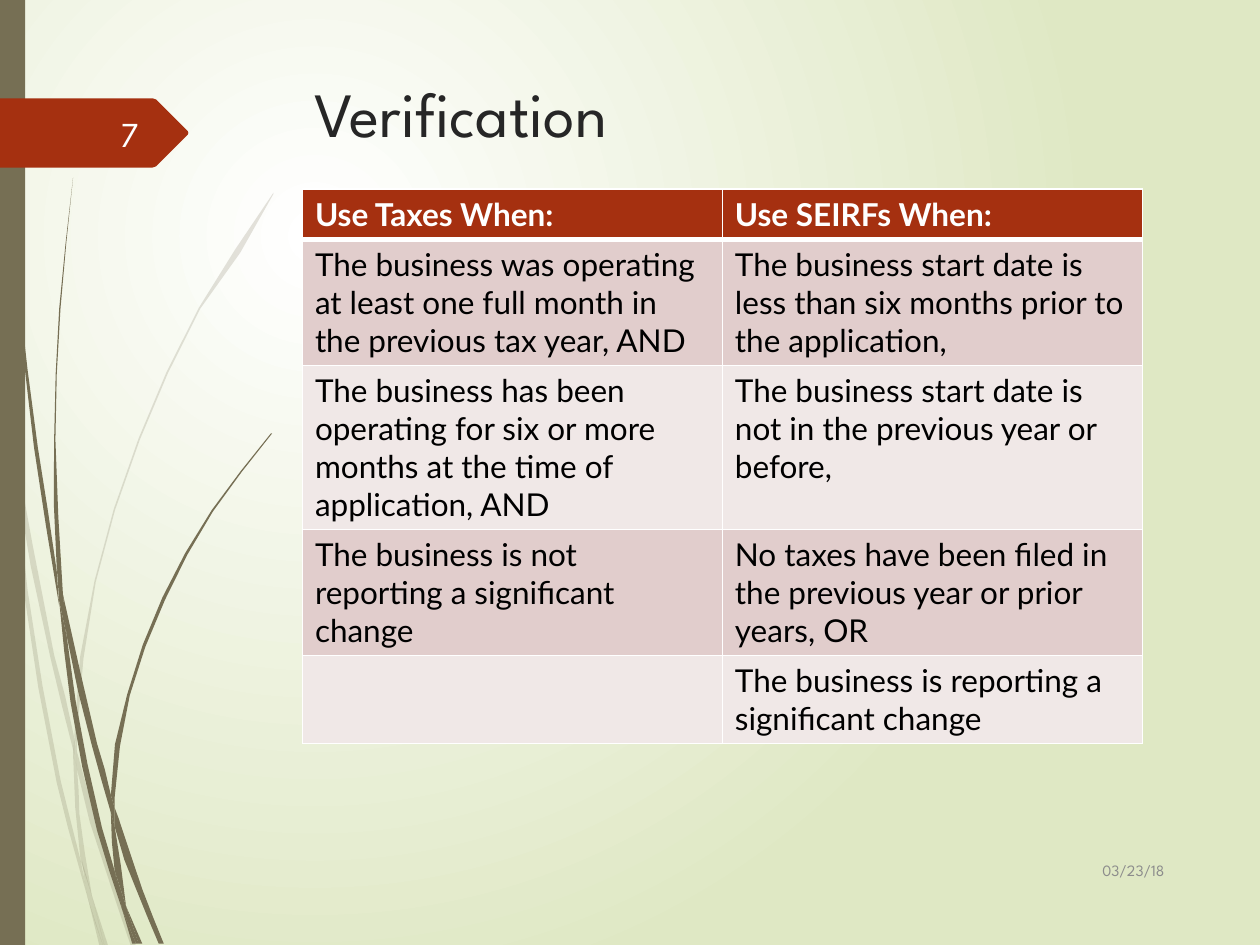
from math import hypot

from pptx import Presentation
from pptx.dml.color import RGBColor
from pptx.enum.shapes import MSO_SHAPE
from pptx.enum.text import MSO_ANCHOR, PP_ALIGN
from pptx.oxml import parse_xml
from pptx.oxml.ns import nsdecls, qn
from pptx.util import Pt

RECTANGLE = MSO_SHAPE.RECTANGLE
TOP, MIDDLE = MSO_ANCHOR.TOP, MSO_ANCHOR.MIDDLE
LEFT, RIGHT = PP_ALIGN.LEFT, PP_ALIGN.RIGHT

WHITE = RGBColor(0xFF, 0xFF, 0xFF)
BLACK = RGBColor(0, 0, 0)
PALE_GREEN = RGBColor(0xDF, 0xE8, 0xC4)
OLIVE = RGBColor(0x76, 0x6F, 0x54)
RUST = RGBColor(0xA5, 0x30, 0x10)
DARK_BAND = RGBColor(0xE1, 0xCD, 0xCC)
LIGHT_BAND = RGBColor(0xF0, 0xE8, 0xE7)
TITLE_INK = RGBColor(0x26, 0x26, 0x26)
DATE_INK = RGBColor(0x8C, 0x8C, 0x8C)
NUMBER_INK = RGBColor(0xFE, 0xFF, 0xFF)

HEADING_FONT, BODY_FONT = "League Spartan", "Lato"
GRID = 0.72  # points per step of the outline coordinates
LONG_SPAN = 30  # a span of this length gets one extra point in its middle
CORNER_COSINE = 0.8

PALE_BLADES = [
    [(8, 350), (0, 282), (0, 299)],
    [(40, 522), (59, 599), (59, 586), (43, 520), (10, 345), (12, 376)],
    [(64, 607), (61, 596), (61, 610), (85, 694), (104, 751), (108, 751), (88, 692)],
    [(83, 751), (86, 751), (73, 711)],
    [(64, 683), (48, 619), (22, 469), (12, 376), (8, 350), (19, 470), (45, 621),
     (64, 693), (70, 714)],
    [(58, 599), (64, 683), (73, 711), (63, 646), (61, 608)],
    [(61, 584), (76, 462), (111, 349), (159, 245), (217, 154),
     (217, 153), (158, 244), (110, 348), (75, 461), (59, 584), (61, 596)],
    [(70, 714), (79, 751), (82, 751)],
    [(61, 608), (61, 596), (59, 586), (58, 599)],
    [(65, 683), (70, 714), (82, 751), (83, 751), (73, 711)],
]
DARK_BLADES = [
    [(5, 110), (14, 233), (27, 355), (47, 481), (45, 453),
     (30, 355), (15, 232), (6, 109), (3, 0), (2, 0)],
    [(73, 592), (88, 645), (88, 631), (77, 590), (50, 472), (53, 505)],
    [(94, 649), (91, 641), (91, 656), (109, 708), (126, 749), (130, 749), (113, 706)],
    [(91, 691), (81, 657), (60, 556), (53, 505), (47, 477), (56, 557), (77, 659),
     (97, 722)],
    [(50, 472), (44, 349), (48, 245), (58, 141), (47, 245), (43, 349), (45, 449),
     (49, 472)],
    [(110, 749), (113, 749), (100, 719)],
    [(47, 477), (53, 505), (50, 472), (45, 449)],
    [(91, 633), (103, 552), (131, 476), (169, 406), (216, 344),
     (215, 344), (168, 405), (129, 474), (101, 551), (88, 631), (91, 641)],
    [(97, 722), (105, 749), (108, 749)],
    [(88, 645), (91, 691), (100, 719), (91, 656)],
    [(88, 645), (91, 656), (91, 641), (88, 631)],
    [(91, 691), (97, 722), (108, 749), (110, 749), (100, 719)],
]
NUMBER_TAG = [(149, 107), (124, 132), (121, 133), (0, 133), (0, 78),
              (121, 78), (124, 79), (149, 104), (149.5, 105.5)]

TABLE_ROWS = [
    ("Use Taxes When:", "Use SEIRFs When:"),
    ("The business was operating at least one full month in the previous tax year, AND",
     "The business start date is less than six months prior to the application,"),
    ("The business has been operating for six or more months at the time of "
     "application, AND",
     "The business start date is not in the previous year or before,"),
    ("The business is not reporting a significant change",
     "No taxes have been filed in the previous year or prior years, OR"),
    ("", "The business is reporting a significant change"),
]
ROW_HEIGHTS = [28.8, 72, 93.6, 72, 50.4]


def unit(start, end):
    """Direction from start to end, with length one."""
    dx, dy = end[0] - start[0], end[1] - start[1]
    length = hypot(dx, dy)
    return dx / length, dy / length


def smooth(anchors):
    """Bend the long spans of a closed outline, but keep its sharp tips."""
    ends = anchors[1:] + anchors[:1]
    headings = [unit(start, end) for start, end in zip(anchors, ends)]
    tangents = []
    for before, after in zip(headings[-1:] + headings, headings):
        if before[0] * after[0] + before[1] * after[1] < CORNER_COSINE:
            tangents.append((before, after))
        else:
            middle = unit((0, 0), (before[0] + after[0], before[1] + after[1]))
            tangents.append((middle, middle))
    points = []
    for i, (start, end) in enumerate(zip(anchors, ends)):
        points.append(start)
        length = hypot(end[0] - start[0], end[1] - start[1])
        if length >= LONG_SPAN:
            leaving, arriving = tangents[i][1], tangents[(i + 1) % len(anchors)][0]
            points.append(tuple(
                (start[k] + end[k]) / 2 + length * (leaving[k] - arriving[k]) / 8
                for k in (0, 1)))
    return points


def paint(shape, color):
    shape.shadow.inherit = False
    shape.fill.solid()
    shape.fill.fore_color.rgb = color
    shape.line.fill.background()


def add_outline(shapes, points, color, opacity=100):
    corners = [(Pt(x * GRID), Pt(y * GRID)) for x, y in points]
    builder = shapes.build_freeform(*corners[0])
    builder.add_line_segments(corners[1:], close=True)
    shape = builder.convert_to_shape()
    paint(shape, color)
    if opacity < 100:
        tone = shape.element.spPr.find(".//" + qn("a:srgbClr"))
        tone.append(parse_xml(f'<a:alpha {nsdecls("a")} val="{opacity * 1000}"/>'))


def add_blades(slide, blades, opacity):
    group = slide.shapes.add_group_shape()
    for anchors in blades:
        add_outline(group.shapes, smooth(anchors), OLIVE, opacity)


def write(frame, text, color, align=LEFT, **font_format):
    para = frame.paragraphs[0]
    para.alignment = align
    span = para.add_run()
    span.text = text
    for name, value in font_format.items():
        setattr(span.font, name, value)
    span.font.color.rgb = color


def add_label(slide, place, text, size, color, align=LEFT, anchor=MIDDLE):
    box = slide.shapes.add_textbox(*map(Pt, place))
    frame = box.text_frame
    frame.word_wrap = True
    frame.vertical_anchor = anchor
    write(frame, text, color, align, name=HEADING_FONT, size=Pt(size))


def add_borders(cell, bottom_width):
    widths = {"lnL": 1, "lnR": 1, "lnT": 1, "lnB": bottom_width}
    properties = cell._tc.get_or_add_tcPr()
    for index, (side, width) in enumerate(widths.items()):
        properties.insert(index, parse_xml(
            f'<a:{side} {nsdecls("a")} w="{Pt(width)}"><a:solidFill>'
            f'<a:srgbClr val="{WHITE}"/></a:solidFill></a:{side}>'))


def add_rules_table(slide):
    place = map(Pt, (172.8, 108, 480, sum(ROW_HEIGHTS)))
    table = slide.shapes.add_table(len(TABLE_ROWS), 2, *place).table
    for r, (texts, height) in enumerate(zip(TABLE_ROWS, ROW_HEIGHTS)):
        header = r == 0
        table.rows[r].height = Pt(height)
        band = RUST if header else DARK_BAND if r % 2 else LIGHT_BAND
        for cell, text in zip(table.rows[r].cells, texts):
            cell.fill.solid()
            cell.fill.fore_color.rgb = band
            add_borders(cell, 3 if header else 1)
            if text:
                write(cell.text_frame, text, WHITE if header else BLACK,
                      name=BODY_FONT, size=Pt(18), bold=header)


def set_background(slide):
    fill = slide.background.fill
    fill.gradient()
    for stop, position, color in zip(fill.gradient_stops, (0, 1), (WHITE, PALE_GREEN)):
        stop.position = position
        stop.color.rgb = color
    linear = slide.element.find(".//" + qn("a:lin"))
    linear.getparent().replace(linear, parse_xml(
        f'<a:path {nsdecls("a")} path="circle"><a:fillToRect l="50000" t="50000" '
        'r="100000" b="100000"/></a:path>'))


def main():
    deck = Presentation()
    deck.slide_width, deck.slide_height = Pt(720), Pt(540)
    slide = deck.slides.add_slide(deck.slide_layouts[6])
    set_background(slide)
    add_blades(slide, PALE_BLADES, 20)
    add_blades(slide, DARK_BLADES, 100)
    side_bar = slide.shapes.add_shape(RECTANGLE, 0, 0, Pt(14.4), Pt(540))
    paint(side_bar, OLIVE)
    add_outline(slide.shapes, NUMBER_TAG, RUST)
    add_label(slide, (172.8, 38.9, 499.7, 62.6), "Verification", 36, TITLE_INK, anchor=TOP)
    add_label(slide, (612, 483.1, 60.5, 28.8), "03/23/18", 9, DATE_INK, RIGHT)
    add_label(slide, (40.3, 61.9, 46.1, 28.8), "7", 20, NUMBER_INK, RIGHT)
    add_rules_table(slide)
    deck.save("out.pptx")


if __name__ == "__main__":
    main()
